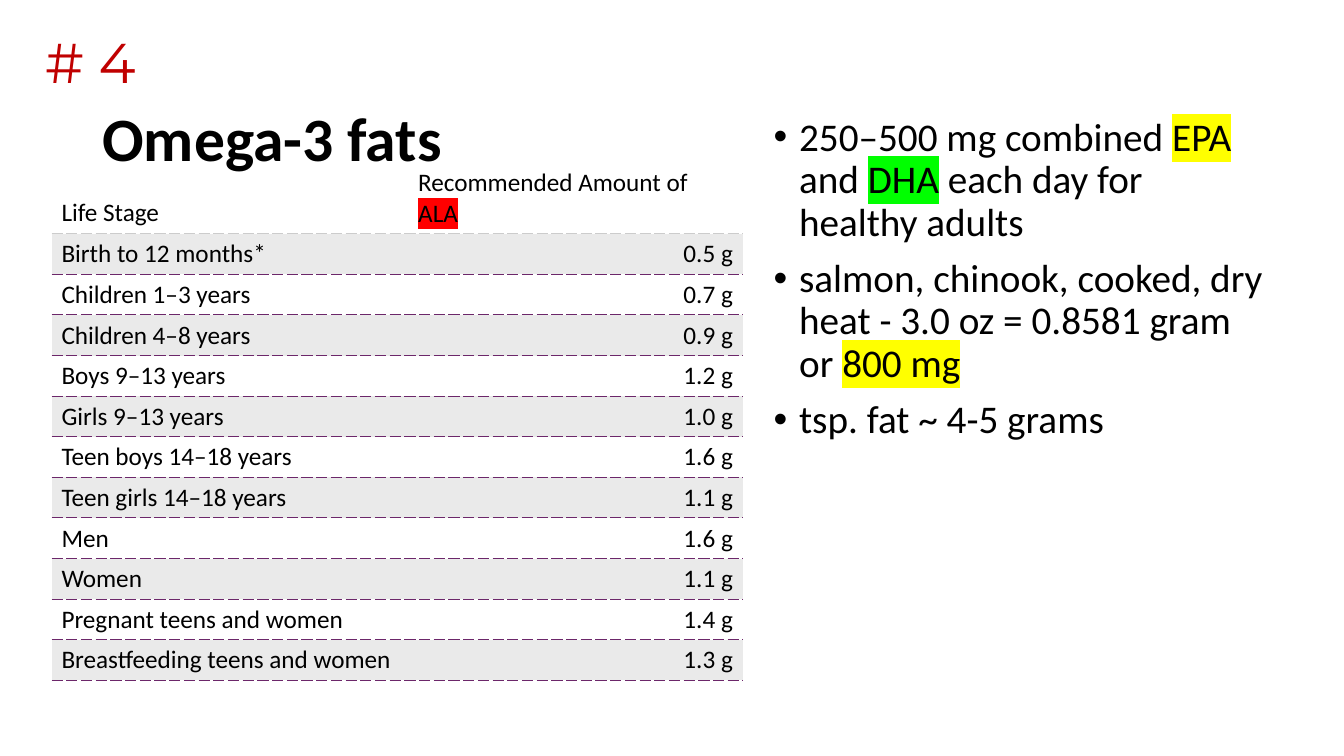
from lxml.etree import SubElement
from pptx import Presentation
from pptx.dml.color import RGBColor
from pptx.enum.text import MSO_ANCHOR as Anchor, PP_ALIGN as Align
from pptx.oxml.ns import qn
from pptx.util import Cm, Pt

BLACK, RED, PURPLE, GRAY, BAND = "000000", "C00000", "6C276A", "CCCCCC", "EAEAEA"
YELLOW, GREEN, BRIGHT_RED = "FFFF00", "00FF00", "FF0000"

ALA_HEADER = ("Life Stage", [("Recommended Amount of ", None), ("ALA", BRIGHT_RED)])
ALA_AMOUNTS = [
    ("Birth to 12 months*", "0.5 g"),
    ("Children 1–3 years", "0.7 g"),
    ("Children 4–8 years", "0.9 g"),
    ("Boys 9–13 years", "1.2 g"),
    ("Girls 9–13 years", "1.0 g"),
    ("Teen boys 14–18 years", "1.6 g"),
    ("Teen girls 14–18 years", "1.1 g"),
    ("Men", "1.6 g"),
    ("Women", "1.1 g"),
    ("Pregnant teens and women", "1.4 g"),
    ("Breastfeeding teens and women", "1.3 g"),
]
OMEGA_FACTS = [
    [("250–500 mg combined ", None), ("EPA", YELLOW), (" and ", None),
     ("DHA", GREEN), (" each day for healthy adults", None)],
    [("salmon, chinook, cooked, dry heat - 3.0 oz = 0.8581 gram or ", None),
     ("800 mg", YELLOW)],
    ["tsp. fat ~ 4-5 grams"],
]


def rgb(code):
    return RGBColor.from_string(code)


def set_all(target, values):
    for name, value in values.items():
        setattr(target, name, value)


class SlideBuilder:
    """Holds the text style and the slide being filled."""

    def __init__(self, slide, font="Calibri", color=BLACK):
        self.slide, self.font, self.color = slide, font, color

    def add_runs(self, paragraph, pieces, size, bold=False, font=None, color=None):
        """Fill a paragraph with plain strings or (text, highlight) pairs."""
        for piece in [pieces] if isinstance(pieces, str) else pieces:
            words, highlight = (piece, None) if isinstance(piece, str) else piece
            run = paragraph.add_run()
            run.text = words
            set_all(run.font, {"size": Pt(size), "bold": bold, "name": font or self.font})
            run.font.color.rgb = rgb(color or self.color)
            if highlight:
                properties = run._r.get_or_add_rPr()
                mark = SubElement(properties, qn("a:highlight"))
                SubElement(mark, qn("a:srgbClr"), val=highlight)
                properties.find(qn("a:solidFill")).addnext(mark)

    def text(self, place, pieces, size, wrap=True, anchor=Anchor.TOP, spacing=1.0, **style):
        frame = self.slide.shapes.add_textbox(*map(Cm, place)).text_frame
        set_all(frame, {"word_wrap": wrap, "vertical_anchor": anchor})
        frame.paragraphs[0].line_spacing = spacing
        self.add_runs(frame.paragraphs[0], pieces, size, **style)

    def bullets(self, place, items, size):
        frame = self.slide.shapes.add_textbox(*map(Cm, place)).text_frame
        frame.word_wrap = True
        for index, item in enumerate(items):
            paragraph = frame.add_paragraph() if index else frame.paragraphs[0]
            set_all(paragraph, {"line_spacing": 0.9, "space_before": Pt(10)})
            properties = paragraph._p.get_or_add_pPr()
            indent = Cm(0.64)
            properties.set("marL", str(indent))
            properties.set("indent", str(-indent))
            SubElement(properties, qn("a:buFont"), typeface="Arial")
            SubElement(properties, qn("a:buChar"), char="•")
            self.add_runs(paragraph, item, size)

    def borders(self, cell, top, bottom):
        """Dash the top and bottom edges; None leaves an edge bare."""
        properties = cell._tc.get_or_add_tcPr()
        for side, color in {"L": None, "R": None, "T": top, "B": bottom}.items():
            edge = SubElement(properties, qn(f"a:ln{side}"), w=str(Pt(0.75)))
            if color:
                fill = SubElement(edge, qn("a:solidFill"))
                SubElement(fill, qn("a:srgbClr"), val=color)
                SubElement(edge, qn("a:prstDash"), val="dash")
            else:
                SubElement(edge, qn("a:noFill"))

    def table(self, place, header, rows, widths, header_height, row_height, size):
        table = self.slide.shapes.add_table(
            len(rows) + 1, len(widths), *map(Cm, place)).table
        set_all(table, {"first_row": False, "horz_banding": False})
        for column, width in zip(table.columns, widths):
            column.width = Cm(width)
        for row, values in enumerate([header, *rows]):
            table.rows[row].height = Cm(row_height if row else header_height)
            top = {0: None, 1: GRAY}.get(row, PURPLE)
            bottom = PURPLE if row else GRAY
            for column, value in enumerate(values):
                cell = table.cell(row, column)
                set_all(cell, {
                    "margin_left": Cm(0.2 if column else 0.25),
                    "margin_right": Cm(0.25),
                    "margin_top": Cm(0.13),
                    "margin_bottom": Cm(0.13),
                    "vertical_anchor": Anchor.TOP if row else Anchor.BOTTOM,
                })
                self.borders(cell, top, bottom)
                if row % 2:
                    cell.fill.solid()
                    cell.fill.fore_color.rgb = rgb(BAND)
                else:
                    cell.fill.background()
                paragraph = cell.text_frame.paragraphs[0]
                paragraph.alignment = Align.RIGHT if row and column else Align.LEFT
                self.add_runs(paragraph, value, size)


def main():
    deck = Presentation()
    set_all(deck, {"slide_width": Cm(33.87), "slide_height": Cm(19.05)})
    page = SlideBuilder(deck.slides.add_slide(deck.slide_layouts[6]))
    page.text((2.33, 1.73, 29.21, 3.68), "Omega-3 fats", 44,
              anchor=Anchor.MIDDLE, spacing=0.9, bold=True)
    page.bullets((19.25, 2.84, 13, 14.48), OMEGA_FACTS, 28)
    page.table((1.3, 4.09, 17.42, 12.93), ALA_HEADER, ALA_AMOUNTS,
               widths=(9.04, 8.38), header_height=1.8, row_height=1.02, size=18)
    page.text((0.89, 0.58, 2.87, 1.96), "# 4", 40, wrap=False,
              font="Montserrat", color=RED)
    deck.save("out.pptx")


if __name__ == "__main__":
    main()
